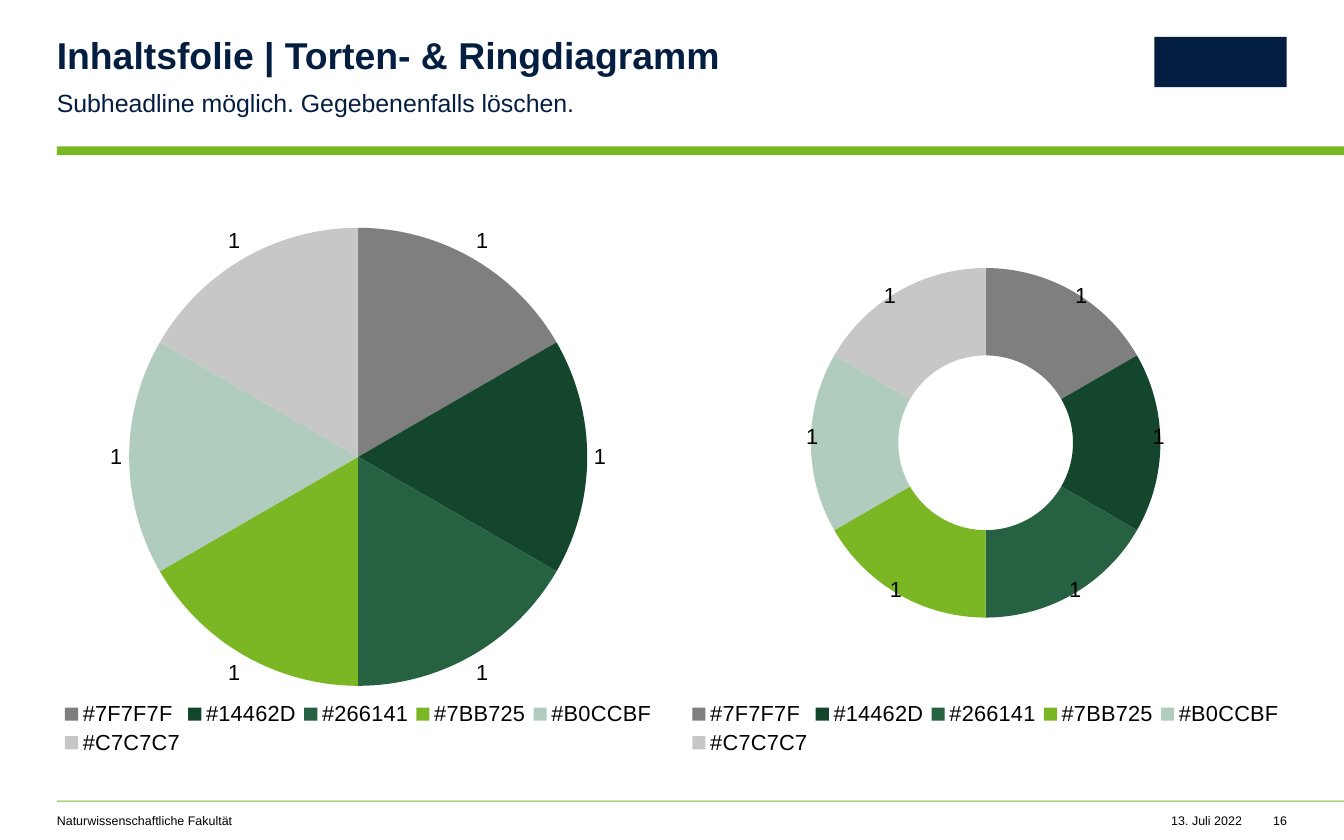
import pptx
import pptx.chart.data
import pptx.dml.color
import pptx.enum.chart
import pptx.enum.shapes
import pptx.enum.text
import pptx.oxml.ns
import pptx.util
from lxml import etree

Cm = pptx.util.Cm
Pt = pptx.util.Pt
qn = pptx.oxml.ns.qn
CHART_TYPE = pptx.enum.chart.XL_CHART_TYPE
ALIGN = pptx.enum.text.PP_ALIGN

# Content
TITLE = "Inhaltsfolie | Torten- & Ringdiagramm"
SUBTITLE = "Subheadline möglich. Gegebenenfalls löschen."
FACULTY = "Naturwissenschaftliche Fakultät"
DATE = "13. Juli 2022"
PAGE = "16"
COLORS = ["7F7F7F", "14462D", "266141", "7BB725", "B0CCBF", "C7C7C7"]
VALUES = [1] * len(COLORS)
# Shift of each ring label, as shares of the chart's width and height
RING_LABEL_SHIFTS = [(0.05, -0.06), (0.07, -0.01), (0.04, 0.06),
                     (-0.04, 0.06), (-0.07, -0.01), (-0.05, -0.06)]
# Plot and legend areas, as shares of the chart
PIE_PLOT = {"x": 0.12, "y": 0.05, "w": 0.76, "h": 0.82}
RING_PLOT = {"x": 0.21, "y": 0.08, "w": 0.58, "h": 0.71}
LEGEND = {"x": 0, "y": 0.89, "w": 1, "h": 0.11}
RING_HOLE = 80

FONT, NAVY, GREEN, BLACK = "Arial", "041E42", "7BB725", "000000"

# Page grid in centimetres
WIDTH, HEIGHT, MARGIN, GAP = 30.48, 19.05, 1.29, 0.56
COLUMN = (WIDTH - 2 * MARGIN - GAP) / 2
FOOTER_TOP = 18.44


def rgb(value):
    return pptx.dml.color.RGBColor.from_string(value)


def set_font(font, size, color=BLACK, bold=False):
    font.name, font.size, font.bold = FONT, Pt(size), bold
    font.color.rgb = rgb(color)


def add_text(slide, text, left, top, width, height, size=8, color=BLACK,
             bold=False, align=ALIGN.LEFT, line_spacing=None):
    shape = slide.shapes.add_textbox(Cm(left), Cm(top), Cm(width), Cm(height))
    frame = shape.text_frame
    frame.word_wrap = True
    frame.margin_left = frame.margin_right = frame.margin_top = frame.margin_bottom = 0
    paragraph = frame.paragraphs[0]
    paragraph.alignment = align
    paragraph.line_spacing = line_spacing
    run = paragraph.add_run()
    run.text = text
    set_font(run.font, size, color, bold)


def add_bar(slide, left, top, width, height, color):
    shape = slide.shapes.add_shape(pptx.enum.shapes.MSO_SHAPE.RECTANGLE,
                                   Cm(left), Cm(top), Cm(width), Cm(height))
    shape.shadow.inherit = False
    shape.fill.solid()
    shape.fill.fore_color.rgb = rgb(color)
    shape.line.fill.background()


def set_layout(parent, index, **settings):
    """Give a chart part a manual layout, placed as child number index."""
    layout = parent.find(qn("c:layout"))
    if layout is None:
        layout = etree.Element(qn("c:layout"))
        parent.insert(index, layout)
    manual = etree.SubElement(layout, qn("c:manualLayout"))
    for name, value in settings.items():
        etree.SubElement(manual, qn("c:" + name)).set("val", str(value))


def add_color_chart(slide, chart_type, left, plot_layout):
    data = pptx.chart.data.CategoryChartData()
    data.categories = ["#" + color for color in COLORS]
    data.add_series("Series 1", VALUES)
    chart = slide.shapes.add_chart(chart_type, Cm(left), Cm(4.52),
                                   Cm(COLUMN), Cm(12.7), data).chart
    chart.has_title = False
    set_font(chart.font, 10)
    chart.has_legend = True
    chart.legend.position = pptx.enum.chart.XL_LEGEND_POSITION.BOTTOM
    chart.legend.include_in_layout = False
    set_font(chart.legend.font, 14)
    plot = chart.plots[0]
    plot.vary_by_categories = True
    plot.has_data_labels = False
    labels = plot.series[0].data_labels
    labels.show_value = True
    labels.show_percentage = False
    set_font(labels.font, 14)
    for index, color in enumerate(COLORS):
        point_format = plot.series[0].points[index].format
        point_format.fill.solid()
        point_format.fill.fore_color.rgb = rgb(color)
        point_format.line.fill.background()

    # Fixed plot and legend areas
    edges = {"xMode": "edge", "yMode": "edge"}
    set_layout(chart.element.find(".//" + qn("c:plotArea")), 0,
               layoutTarget="inner", **edges, **plot_layout)
    set_layout(chart.element.find(".//" + qn("c:legend")), 1, **edges, **LEGEND)
    return chart


def arrange_ring(chart):
    """Set the hole and the label positions."""
    chart.element.find(".//" + qn("c:holeSize")).set("val", str(RING_HOLE))
    points = chart.plots[0].series[0].points
    for index in range(len(RING_LABEL_SHIFTS)):
        set_font(points[index].data_label.font, 14)
    for label, (x, y) in zip(chart.element.iter(qn("c:dLbl")), RING_LABEL_SHIFTS):
        set_layout(label, 1, x=x, y=y)
        position = label.find(qn("c:dLblPos"))
        if position is not None:
            label.remove(position)


def main():
    presentation = pptx.Presentation()
    presentation.slide_width, presentation.slide_height = Cm(WIDTH), Cm(HEIGHT)
    slide = presentation.slides.add_slide(presentation.slide_layouts[6])

    # Green rules and a plain block in the logo's place
    add_bar(slide, MARGIN, 3.32, WIDTH - MARGIN, 0.2, GREEN)
    add_bar(slide, MARGIN, 18.16, WIDTH - MARGIN, 0.02, GREEN)
    add_bar(slide, 26.18, 0.84, 3, 1.14, NAVY)

    # Heading
    add_text(slide, TITLE, MARGIN, 0.84, 17.12, 0.92, size=24, color=NAVY,
             bold=True, line_spacing=0.9)
    add_text(slide, SUBTITLE, MARGIN, 1.92, 17.12, 0.7, size=16, color=NAVY,
             line_spacing=1.1)

    # Charts
    pie = add_color_chart(slide, CHART_TYPE.PIE, MARGIN, PIE_PLOT)
    pie.plots[0].series[0].data_labels.position = (
        pptx.enum.chart.XL_LABEL_POSITION.OUTSIDE_END)
    ring = add_color_chart(slide, CHART_TYPE.DOUGHNUT, MARGIN + COLUMN + GAP, RING_PLOT)
    arrange_ring(ring)

    # Footer
    add_text(slide, FACULTY, MARGIN, FOOTER_TOP, COLUMN, 0.33)
    add_text(slide, DATE, 26.17, FOOTER_TOP, 2, 0.33, align=ALIGN.RIGHT)
    add_text(slide, PAGE, 28.64, FOOTER_TOP, 0.55, 0.33, align=ALIGN.RIGHT)

    presentation.save("out.pptx")


if __name__ == "__main__":
    main()
